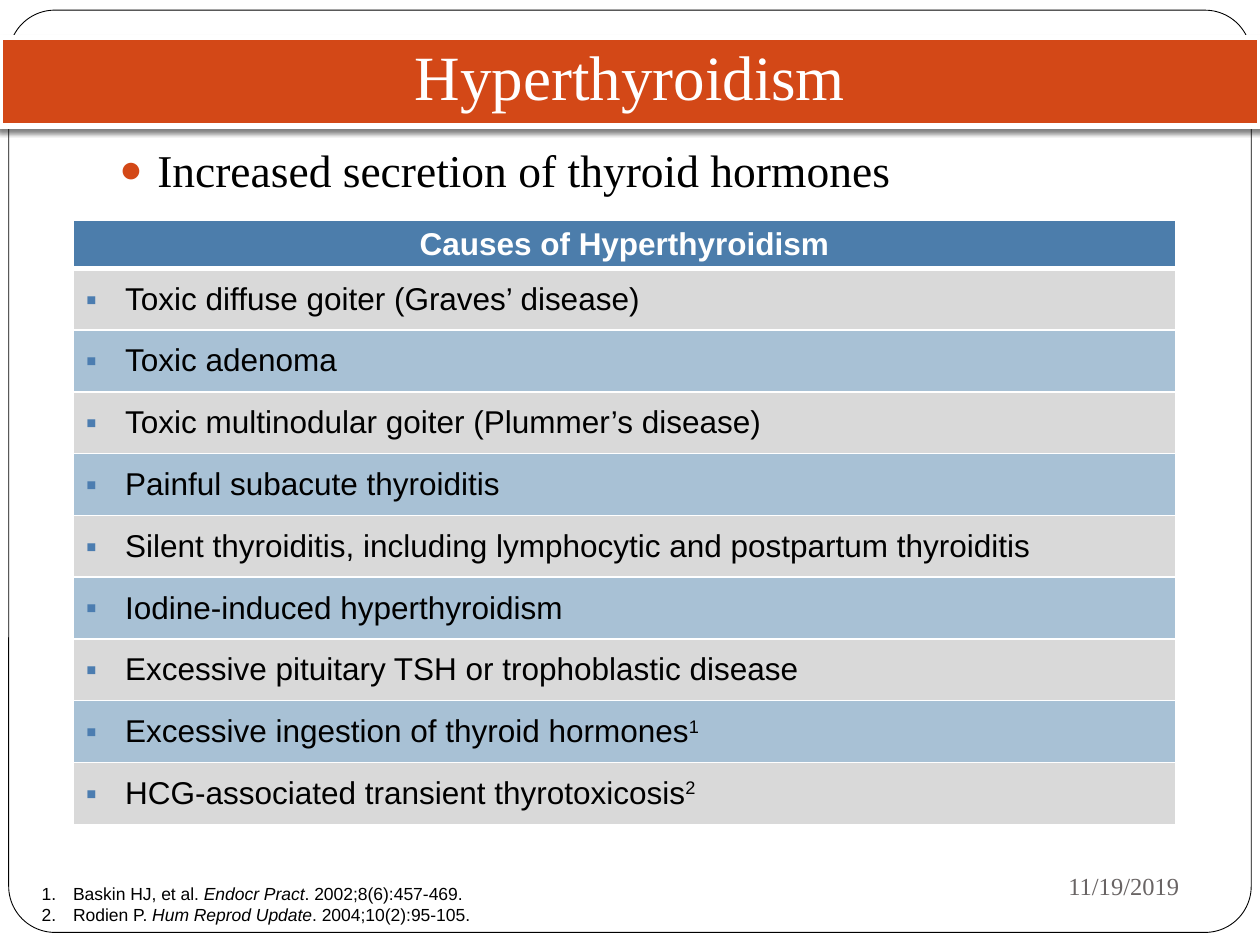
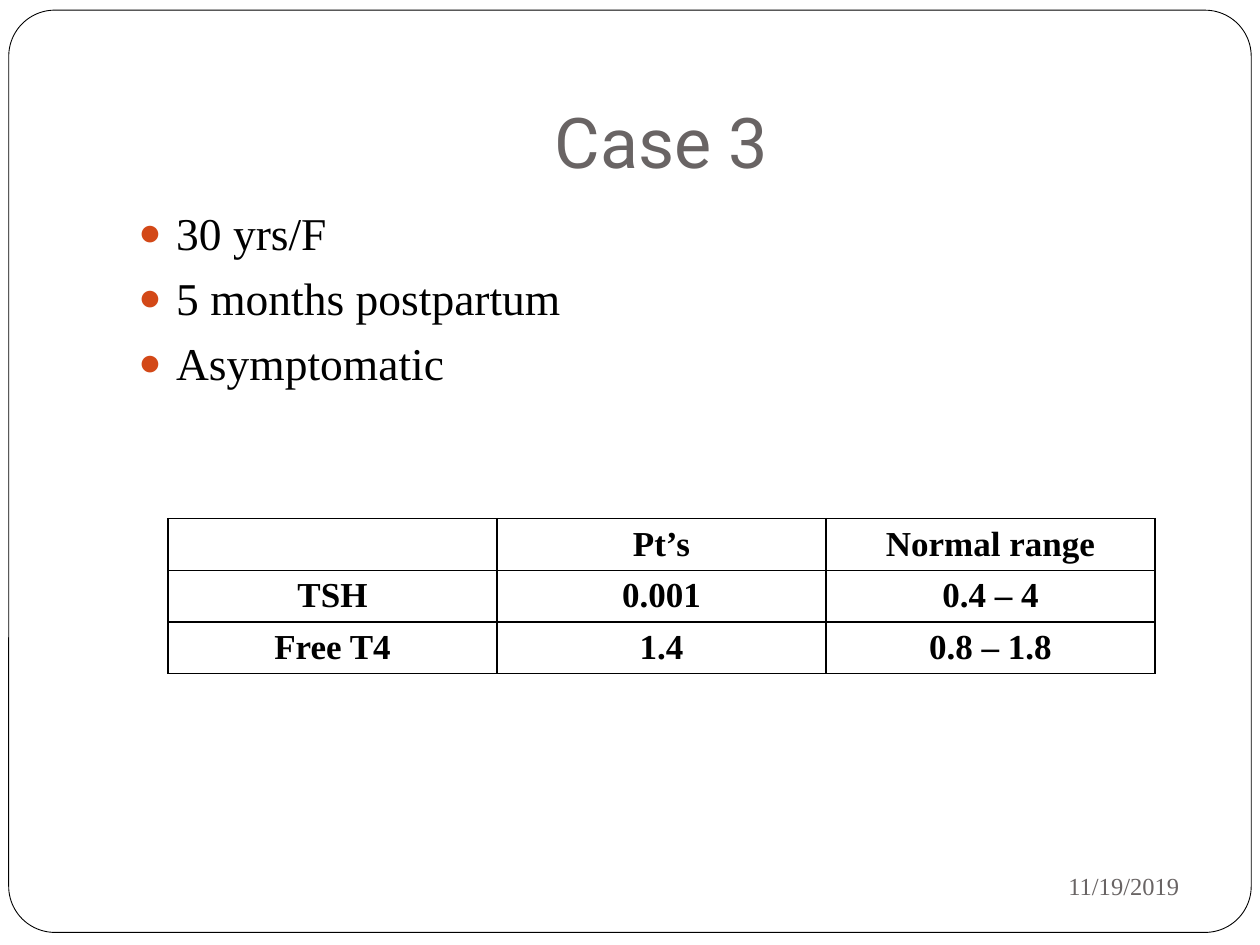
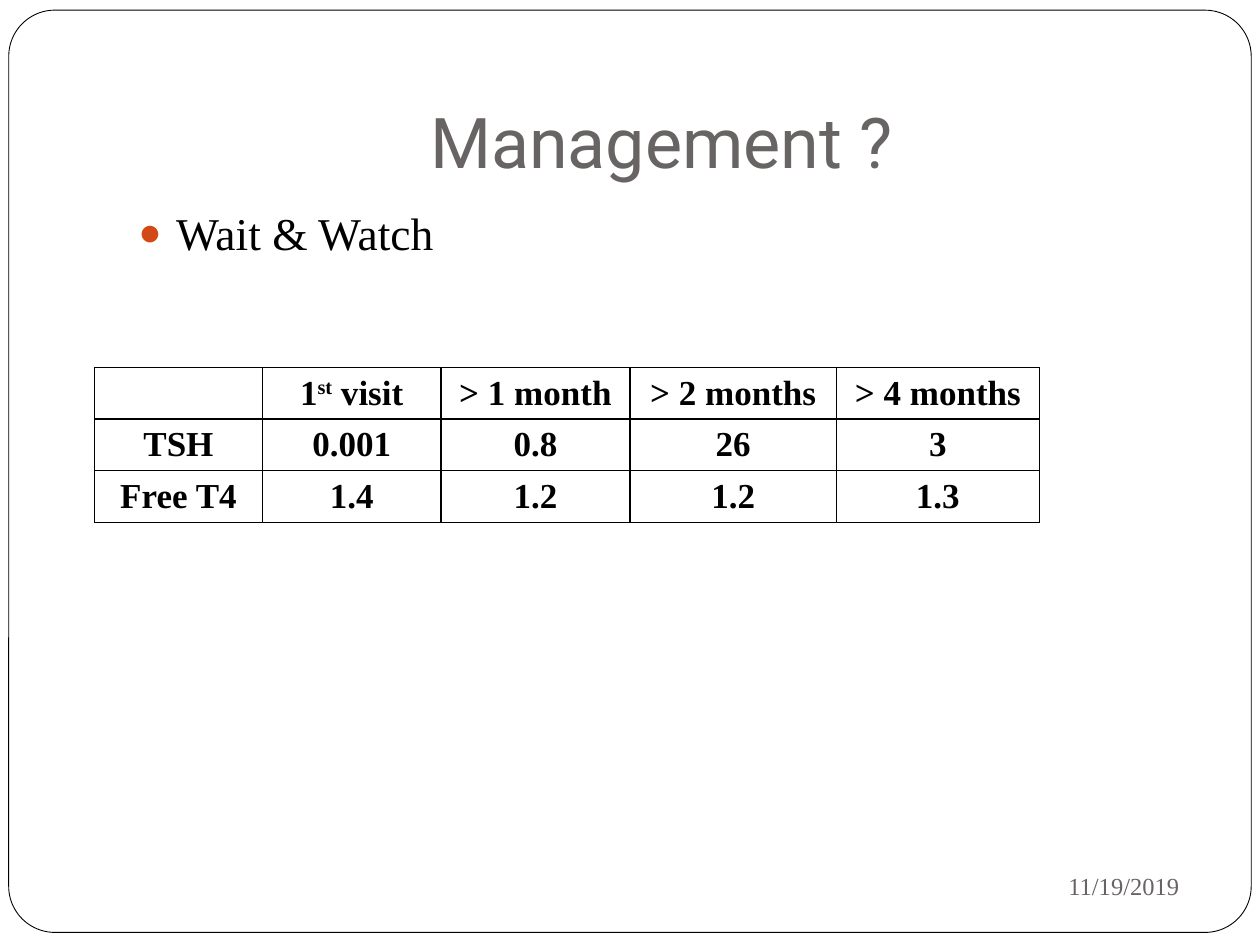
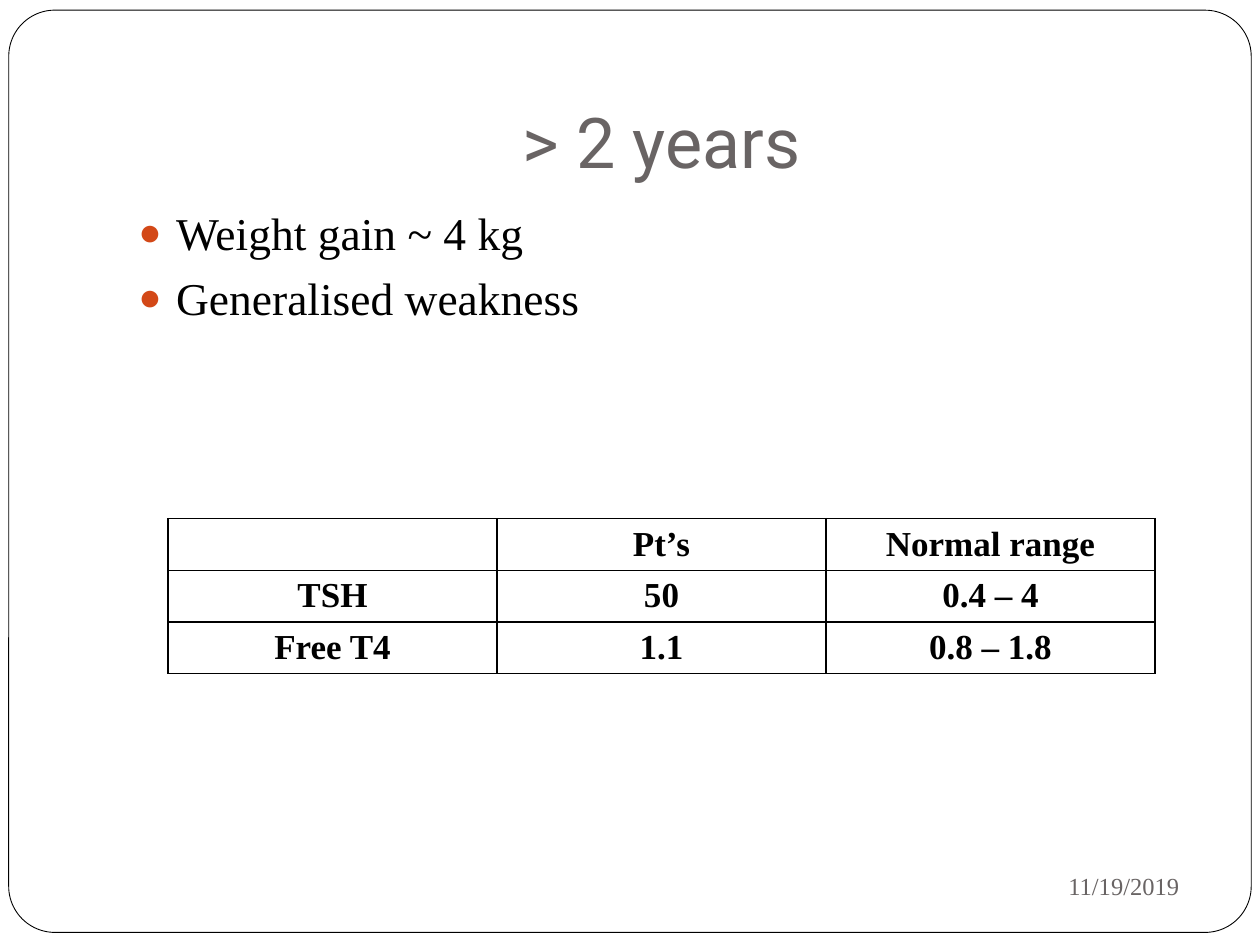
from lxml import etree
from pptx import Presentation
from pptx.dml.color import RGBColor
from pptx.enum import shapes, text
from pptx.oxml.ns import qn
from pptx.util import Pt

ORANGE = RGBColor(0xD3, 0x48, 0x17)
GREY = RGBColor(0x69, 0x64, 0x64)
BLACK = RGBColor(0, 0, 0)
WHITE = RGBColor(0xFF, 0xFF, 0xFF)
HEADER_BLUE = RGBColor(0x4C, 0x7D, 0xAB)
MARK_BLUE = RGBColor(0x4C, 0x7D, 0xB0)
ROW_BLUE = RGBColor(0xA8, 0xC1, 0xD5)
ROW_GREY = RGBColor(0xD9, 0xD9, 0xD9)

SERIF, SANS, HEADING = "Times New Roman", "Arial", "Roboto"
LEFT, CENTER, RIGHT = text.PP_ALIGN.LEFT, text.PP_ALIGN.CENTER, text.PP_ALIGN.RIGHT
TOP, MIDDLE, BOTTOM = text.MSO_ANCHOR.TOP, text.MSO_ANCHOR.MIDDLE, text.MSO_ANCHOR.BOTTOM
TITLE_ONLY = 5
DATE = "11/19/2019"


def add_xml(parent, tag, **attributes):
    return etree.SubElement(parent, qn(tag), attributes)


def add_color(parent, color):
    return add_xml(add_xml(parent, "a:solidFill"), "a:srgbClr", val=str(color))


class Deck:
    """Holds the presentation, its style and the current slide."""

    def __init__(self):
        self.prs = Presentation()
        self.prs.slide_width, self.prs.slide_height = Pt(720), Pt(540)
        self.slide = None

    # Shared frame, title and date
    def new_slide(self, title, banner=False):
        self.slide = self.prs.slides.add_slide(self.prs.slide_layouts[TITLE_ONLY])
        self.frame()
        self.title(title, banner)
        self.text_box((486, 487.4, 195, 37.4), [DATE], SERIF, 14, GREY, RIGHT, MIDDLE)

    def frame(self):
        frame = self.slide.shapes.add_shape(
            shapes.MSO_SHAPE.ROUNDED_RECTANGLE, Pt(5), Pt(5.8), Pt(710), Pt(527))
        frame.adjustments[0] = 0.05
        frame.shadow.inherit = False
        frame.fill.solid()
        frame.fill.fore_color.rgb = WHITE
        frame.line.color.rgb = BLACK
        frame.line.width = Pt(0.5)
        self.slide.shapes._spTree.insert(2, frame._element)  # behind the title

    def title(self, words, banner):
        title = self.slide.shapes.title
        box = (0, 21.6, 720, 50.4) if banner else (72, 21.6, 612, 90)
        self.place(title, box, BOTTOM, (7.2, 3.6, 7.2, 7.2))
        if banner:
            title.fill.solid()
            title.fill.fore_color.rgb = ORANGE
            title.line.color.rgb = WHITE
            title.line.width = Pt(3)
            self.drop_shadow(title)
            font = (SERIF, 36, WHITE)
        else:
            font = (HEADING, 40, GREY)
        self.add_words(title.text_frame.paragraphs[0], words, *font, CENTER)

    def drop_shadow(self, shape):
        shape.shadow.inherit = False
        effects = shape._element.spPr.find(qn("a:effectLst"))
        shadow = add_xml(effects, "a:outerShdw", blurRad=str(Pt(3)), dist=str(Pt(2)),
                         dir="5400000", algn="t", rotWithShape="0")
        add_xml(add_xml(shadow, "a:srgbClr", val=str(BLACK)), "a:alpha", val="50000")

    # Text
    def place(self, shape, box, anchor, insets):
        shape.left, shape.top, shape.width, shape.height = map(Pt, box)
        frame = shape.text_frame
        frame.word_wrap = True
        frame.auto_size = text.MSO_AUTO_SIZE.NONE
        frame.vertical_anchor = anchor
        (frame.margin_left, frame.margin_top,
         frame.margin_right, frame.margin_bottom) = map(Pt, insets)

    def add_words(self, paragraph, words, name, size, color, align=LEFT, bold=False):
        """Words are a string, or (string, style) pairs with style "", "italic" or "super"."""
        paragraph.alignment = align
        for part, style in [(words, "")] if isinstance(words, str) else words:
            run = paragraph.add_run()
            run.text = part
            font = run.font
            font.name, font.size, font.bold = name, Pt(size), bold
            font.italic = style == "italic"
            font.color.rgb = color
            if style == "super":
                font._element.set("baseline", "30000")

    def indent(self, paragraph, width):
        props = paragraph._p.get_or_add_pPr()
        props.set("marL", str(Pt(width)))
        props.set("indent", str(-Pt(width)))
        return props

    def bullet(self, paragraph, mark, color, width, percent=100):
        props = self.indent(paragraph, width)
        add_xml(add_xml(props, "a:buClr"), "a:srgbClr", val=str(color))
        add_xml(props, "a:buSzPct", val=str(percent * 1000))
        add_xml(props, "a:buFont", typeface=SANS)
        add_xml(props, "a:buChar", char=mark)

    def text_box(self, box, lines, name, size, color, align=LEFT, anchor=TOP,
                 insets=(7.2, 3.6, 7.2, 3.6)):
        shape = self.slide.shapes.add_textbox(*map(Pt, box))
        self.place(shape, box, anchor, insets)
        frame = shape.text_frame
        for number, words in enumerate(lines):
            paragraph = frame.add_paragraph() if number else frame.paragraphs[0]
            self.add_words(paragraph, words, name, size, color, align)
        return frame.paragraphs

    def points(self, lines, left=72, top=113.8):
        for point in self.text_box((left, top, 612, 360), lines, SERIF, 26, BLACK):
            point.space_before = Pt(5.8)
            self.bullet(point, "●", ORANGE, 21.6, 85)

    def references(self, lines):
        for entry in self.text_box((23.8, 504, 648, 24.5), lines, SANS, 10, BLACK,
                                   anchor=BOTTOM, insets=(0, 0, 0, 0)):
            self.indent(entry, 18)

    # Tables
    def grid(self, left, top, widths, heights):
        table = self.slide.shapes.add_table(
            len(heights), len(widths), Pt(left), Pt(top),
            Pt(sum(widths)), Pt(sum(heights))).table
        table.horz_banding = False
        for column, width in zip(table.columns, widths):
            column.width = Pt(width)
        for row, height in zip(table.rows, heights):
            row.height = Pt(height)
        return table

    def borders(self, cell, color, **widths):
        props = cell._tc.get_or_add_tcPr()
        for place, side in enumerate("LRTB"):
            line = etree.Element(qn(f"a:ln{side}"), w=str(Pt(widths.get(side, 1))))
            add_color(line, color)
            props.insert(place, line)

    def cause_table(self, header, causes):
        table = self.grid(41.8, 126, [630], [23] + [35.3] * len(causes))
        for row, words in enumerate([header] + causes):
            cell = table.cell(row, 0)
            paragraph = cell.text_frame.paragraphs[0]
            cell.vertical_anchor = MIDDLE
            cell.fill.solid()
            if row == 0:
                cell.fill.fore_color.rgb = HEADER_BLUE
                self.add_words(paragraph, words, SANS, 18, WHITE, CENTER, bold=True)
            else:
                cell.fill.fore_color.rgb = ROW_GREY if row % 2 else ROW_BLUE
                self.add_words(paragraph, words, SANS, 18, BLACK)
                self.bullet(paragraph, "▪", MARK_BLUE, 22.5)
            self.borders(cell, WHITE, B=3 if row == 0 else 1, T=3 if row == 1 else 1)

    def lab_table(self, rows, left=96, top=296.4, widths=(188, 188, 188)):
        table = self.grid(left, top, widths, [29.5] * len(rows))
        for row, values in enumerate(rows):
            for column, value in enumerate(values):
                cell = table.cell(row, column)
                cell.fill.background()
                self.borders(cell, BLACK)
                if value:
                    self.add_words(cell.text_frame.paragraphs[0], value,
                                   SERIF, 20, BLACK, CENTER, bold=True)

    def patient_table(self, tsh, free_t4):
        self.lab_table([["", "Pt’s", "Normal range"],
                        ["TSH", tsh, "0.4 – 4"],
                        ["Free T4", free_t4, "0.8 – 1.8"]])


def main():
    deck = Deck()

    # Causes of hyperthyroidism
    deck.new_slide("Hyperthyroidism", banner=True)
    deck.points(["Increased secretion of thyroid hormones"], left=61.2, top=77.8)
    deck.references([
        [("1. \tBaskin HJ, et al. ", ""), ("Endocr Pract", "italic"),
         (". 2002;8(6):457-469.", "")],
        [("2. \tRodien P. ", ""), ("Hum Reprod Update", "italic"),
         (". 2004;10(2):95-105.", "")],
    ])
    deck.cause_table("Causes of Hyperthyroidism", [
        "Toxic diffuse goiter (Graves’ disease)",
        "Toxic adenoma",
        "Toxic multinodular goiter (Plummer’s disease)",
        "Painful subacute thyroiditis",
        "Silent thyroiditis, including lymphocytic and postpartum thyroiditis",
        "Iodine-induced hyperthyroidism",
        "Excessive pituitary TSH or trophoblastic disease",
        [("Excessive ingestion of thyroid hormones", ""), ("1", "super")],
        [("HCG-associated transient thyrotoxicosis", ""), ("2", "super")],
    ])

    # Case presentation
    deck.new_slide("Case 3")
    deck.points(["30 yrs/F", "5 months postpartum", "Asymptomatic"])
    deck.patient_table("0.001", "1.4")

    # Management and follow-up
    deck.new_slide("Management ?")
    deck.points(["Wait & Watch"])
    first_visit = [("1", ""), ("st", "super"), (" visit", "")]
    deck.lab_table([["", first_visit, "> 1 month", "> 2 months", "> 4 months"],
                    ["TSH", "0.001", "0.8", "26", "3"],
                    ["Free T4", "1.4", "1.2", "1.2", "1.3"]],
                   left=54, top=210, widths=(96, 102, 108, 118, 116))

    # Two years later
    deck.new_slide("> 2 years")
    deck.points(["Weight gain ~ 4 kg", "Generalised weakness"])
    deck.patient_table("50", "1.1")

    deck.prs.save("out.pptx")


if __name__ == "__main__":
    main()
